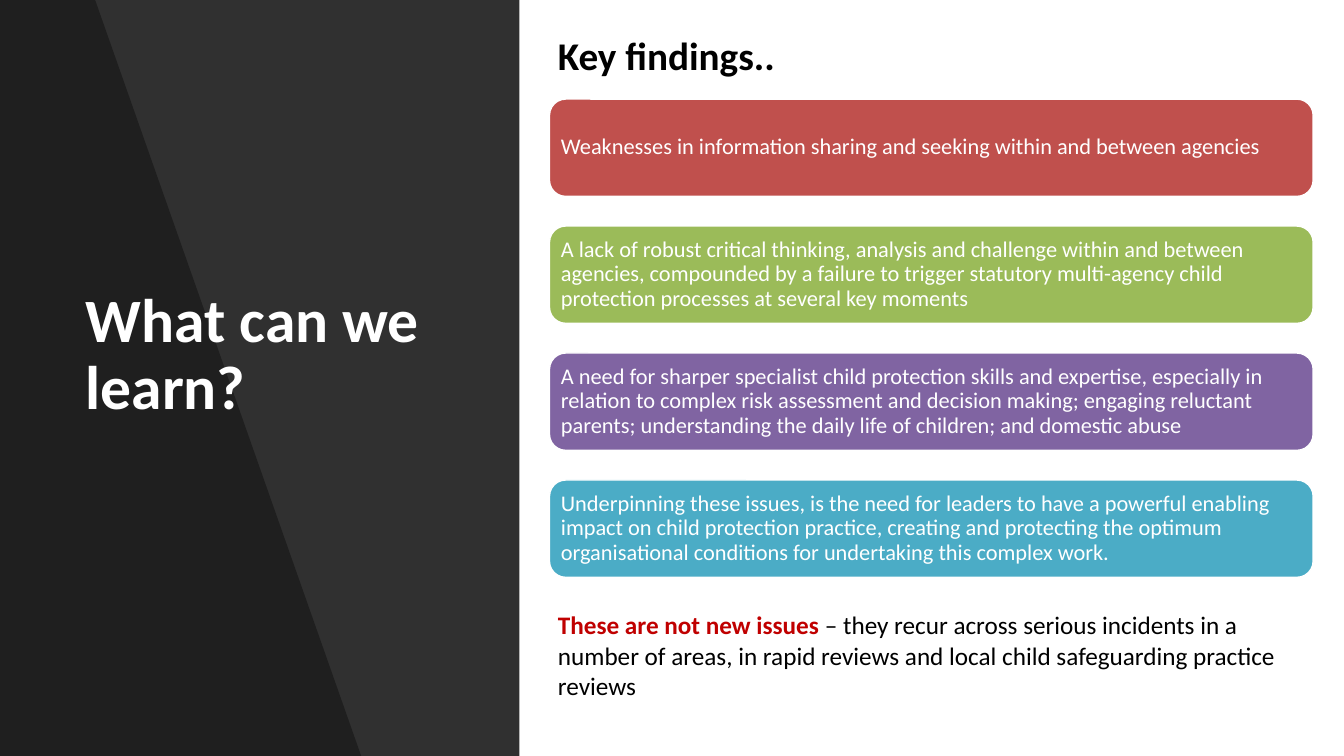
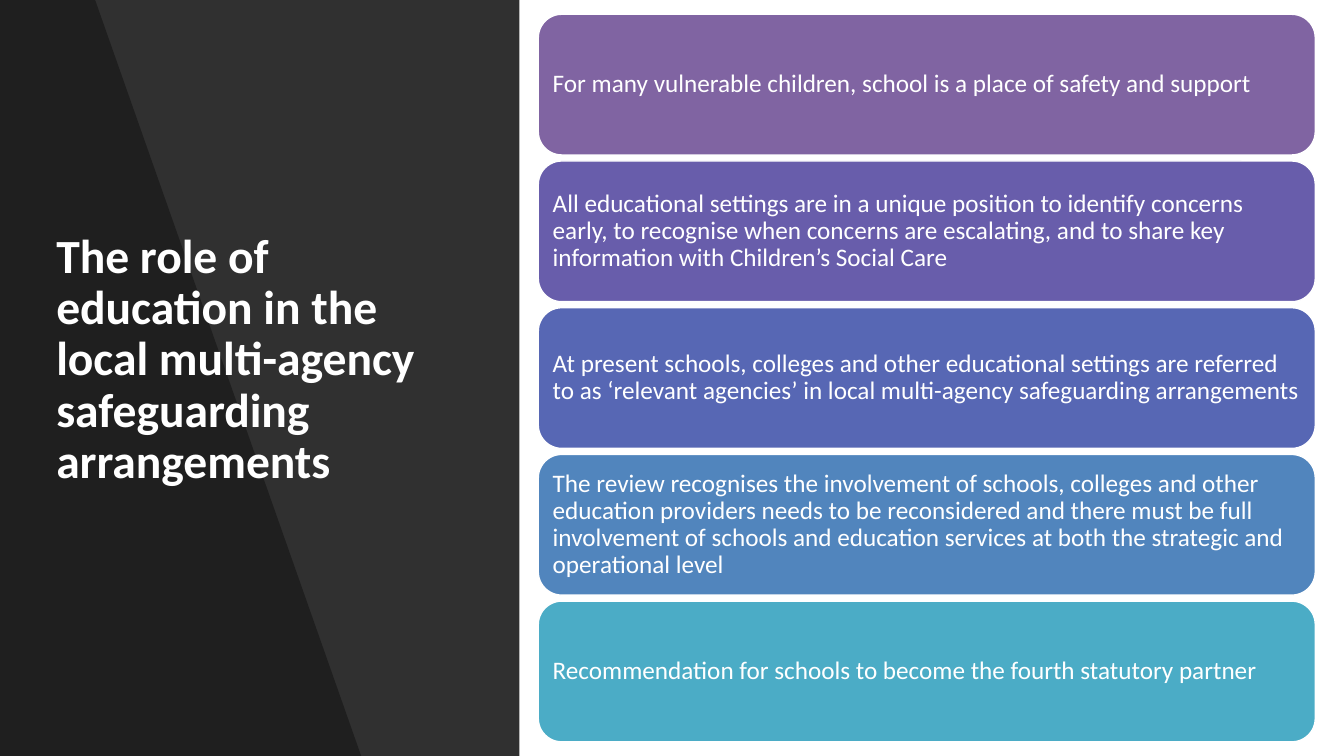
from lxml import etree
from pptx import Presentation
from pptx.dml.color import RGBColor
from pptx.enum import shapes as shp, text as txt
from pptx.oxml.ns import qn
from pptx.util import Pt

WHITE = RGBColor(0xFF, 0xFF, 0xFF)
BLACK = RGBColor(0x00, 0x00, 0x00)
CRIMSON = RGBColor(0xC0, 0x00, 0x00)
RED = RGBColor(0xC0, 0x50, 0x4D)
GREEN = RGBColor(0x9B, 0xBB, 0x59)
PURPLE = RGBColor(0x80, 0x64, 0xA2)
VIOLET = RGBColor(0x68, 0x5D, 0xAB)
INDIGO = RGBColor(0x57, 0x67, 0xB4)
BLUE = RGBColor(0x51, 0x85, 0xBD)
AQUA = RGBColor(0x4B, 0xAC, 0xC6)
FONT = "Calibri"
WIDTH, HEIGHT = 960, 540
PANEL_WIDTH = 371

# Content: boxes are (left, top, width, height); all lengths in points
SLIDES = [
    {
        "title": "What can we learn?", "title_size": 44,
        "title_box": (54, 47.5, 304, 414),
        "first_card": (392.5, 70.8, 545.5, 69.5), "pitch": 90.7, "card_size": 16,
        "cards": [
            (RED, "Weaknesses in information sharing and seeking within and between agencies"),
            (GREEN, "A lack of robust critical thinking, analysis and challenge within and "
                    "between agencies, compounded by a failure to trigger statutory "
                    "multi-agency child protection processes at several key moments"),
            (PURPLE, "A need for sharper specialist child protection skills and expertise, "
                     "especially in relation to complex risk assessment and decision making; "
                     "engaging reluctant parents; understanding the daily life of children; "
                     "and domestic abuse"),
            (AQUA, "Underpinning these issues, is the need for leaders to have a powerful "
                   "enabling impact on child protection practice, creating and protecting the "
                   "optimum organisational conditions for undertaking this complex work."),
        ],
        "notes": [
            ((391.5, 18.7, 276.5, 41), 28, [("Key findings..", BLACK, True)]),
            ((391.5, 432, 554.5, 73), 18, [
                ("These are not new issues ", CRIMSON, True),
                ("– they recur across serious incidents in a number of areas, in rapid "
                 "reviews and local child safeguarding practice reviews", BLACK, False)]),
        ],
    },
    {
        "title": "The role of education in the local multi-agency safeguarding arrangements",
        "title_size": 34,
        "title_box": (33, 50.5, 314, 414),
        "first_card": (384.5, 10.2, 555, 100.5), "pitch": 104.8, "card_size": 18,
        "cards": [
            (PURPLE, "For many vulnerable children, school is a place of safety and support"),
            (VIOLET, "All educational settings are in a unique position to identify concerns "
                     "early, to recognise when concerns are escalating, and to share key "
                     "information with Children’s Social Care"),
            (INDIGO, "At present schools, colleges and other educational settings are referred "
                     "to as ‘relevant agencies’ in local multi-agency safeguarding arrangements"),
            (BLUE, "The review recognises the involvement of schools, colleges and other "
                   "education providers needs to be reconsidered and there must be full "
                   "involvement of schools and education services at both the strategic and "
                   "operational level"),
            (AQUA, "Recommendation for schools to become the fourth statutory partner"),
        ],
        "notes": [],
    },
]


def points(box):
    return [Pt(length) for length in box]


def write(shape, runs, size, spacing=1.0, anchor=txt.MSO_ANCHOR.MIDDLE, inset=None):
    """Fill a shape with one left-aligned paragraph of (text, colour, bold) runs."""
    frame = shape.text_frame
    frame.word_wrap = True
    frame.auto_size = txt.MSO_AUTO_SIZE.NONE
    frame.vertical_anchor = anchor
    if inset is not None:
        frame.margin_left = frame.margin_right = Pt(inset)
        frame.margin_top = frame.margin_bottom = Pt(inset)
    paragraph = frame.paragraphs[0]
    paragraph.alignment = txt.PP_ALIGN.LEFT
    paragraph.line_spacing = spacing
    for words, colour, bold in runs:
        run = paragraph.add_run()
        run.text = words
        run.font.name, run.font.size, run.font.bold = FONT, Pt(size), bold
        run.font.color.rgb = colour


def shade(shape, opacity):
    """Give a shape a see-through black fill and no line."""
    shape.shadow.inherit = False
    shape.line.fill.background()
    shape.fill.solid()
    shape.fill.fore_color.rgb = BLACK
    colour = shape._element.spPr.find(".//" + qn("a:srgbClr"))
    etree.SubElement(colour, qn("a:alpha")).set("val", str(opacity * 1000))


def add_dark_panel(layout, slide):
    """Build the slanted panel, then move it to the layout behind every title."""
    panel = slide.shapes.add_shape(shp.MSO_SHAPE.RECTANGLE,
                                   *points((0, 0, PANEL_WIDTH, HEIGHT)))
    outline = slide.shapes.build_freeform(0, 0, scale=Pt(1))
    outline.add_line_segments([(68.5, 0), (258.5, HEIGHT), (0, HEIGHT)], close=True)
    slant = outline.convert_to_shape()
    for position, (part, opacity) in enumerate([(panel, 81), (slant, 35)], start=2):
        shade(part, opacity)
        layout.shapes._spTree.insert(position, part._element)


def add_cards(slide, content):
    left, top, width, height = content["first_card"]
    size = content["card_size"]
    for row, (colour, words) in enumerate(content["cards"]):
        card = slide.shapes.add_shape(
            shp.MSO_SHAPE.ROUNDED_RECTANGLE,
            *points((left, top + row * content["pitch"], width, height)))
        card.shadow.inherit = False
        card.fill.solid()
        card.fill.fore_color.rgb = colour
        card.line.color.rgb = WHITE
        card.line.width = Pt(1)
        write(card, [(words, WHITE, False)], size, spacing=0.9, inset=0.3 * size)


def main():
    deck = Presentation()
    deck.slide_width, deck.slide_height = Pt(WIDTH), Pt(HEIGHT)
    layout = deck.slide_layouts[5]  # title only
    for number, content in enumerate(SLIDES):
        slide = deck.slides.add_slide(layout)
        if number == 0:
            add_dark_panel(layout, slide)

        # Title on the dark panel
        title = slide.shapes.title
        title.left, title.top, title.width, title.height = points(content["title_box"])
        write(title, [(content["title"], WHITE, True)], content["title_size"], spacing=0.9)

        # Coloured cards, then the plain text around them
        add_cards(slide, content)
        for box, size, runs in content["notes"]:
            note = slide.shapes.add_textbox(*points(box))
            write(note, runs, size, anchor=txt.MSO_ANCHOR.TOP)
    deck.save("out.pptx")


if __name__ == "__main__":
    main()
